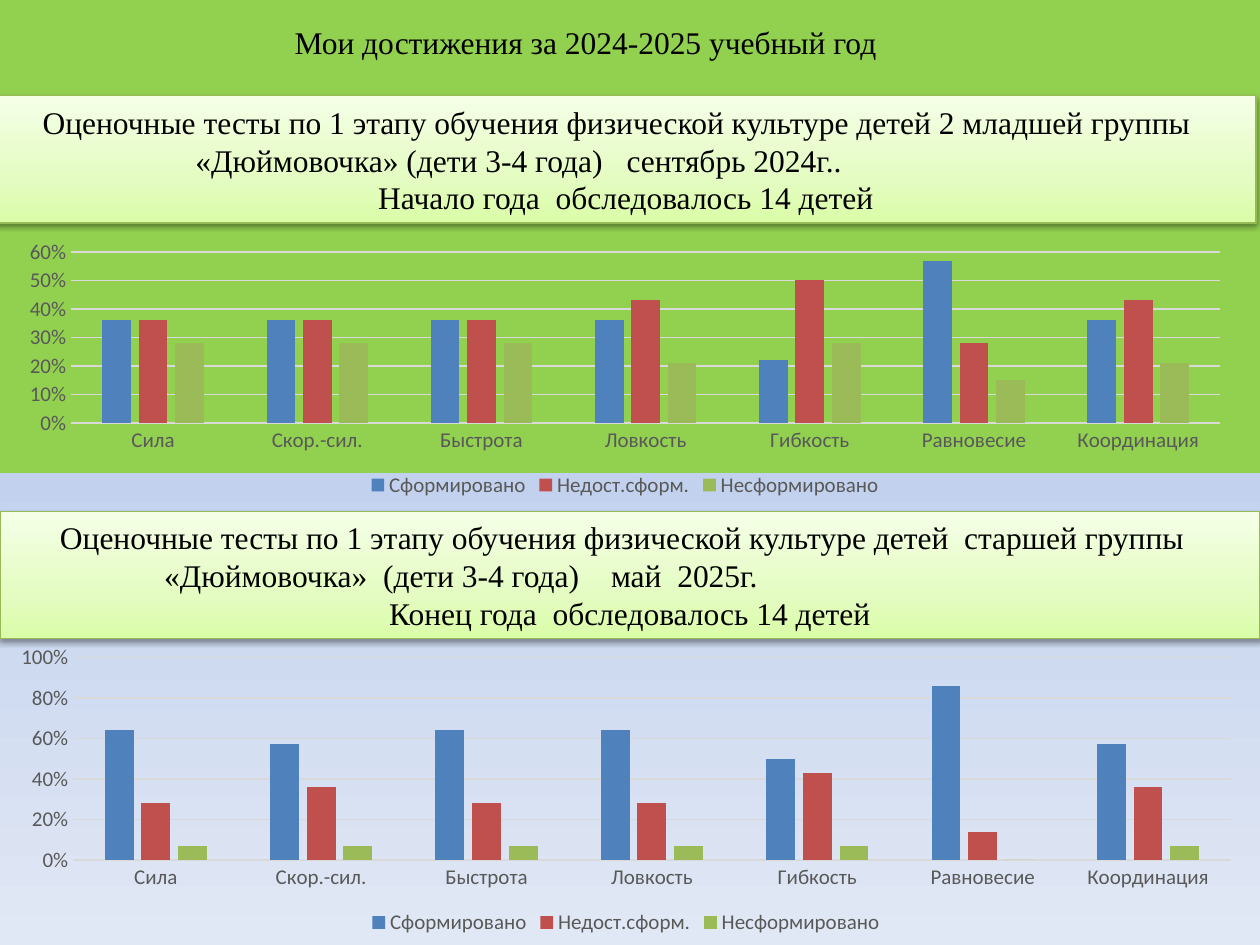
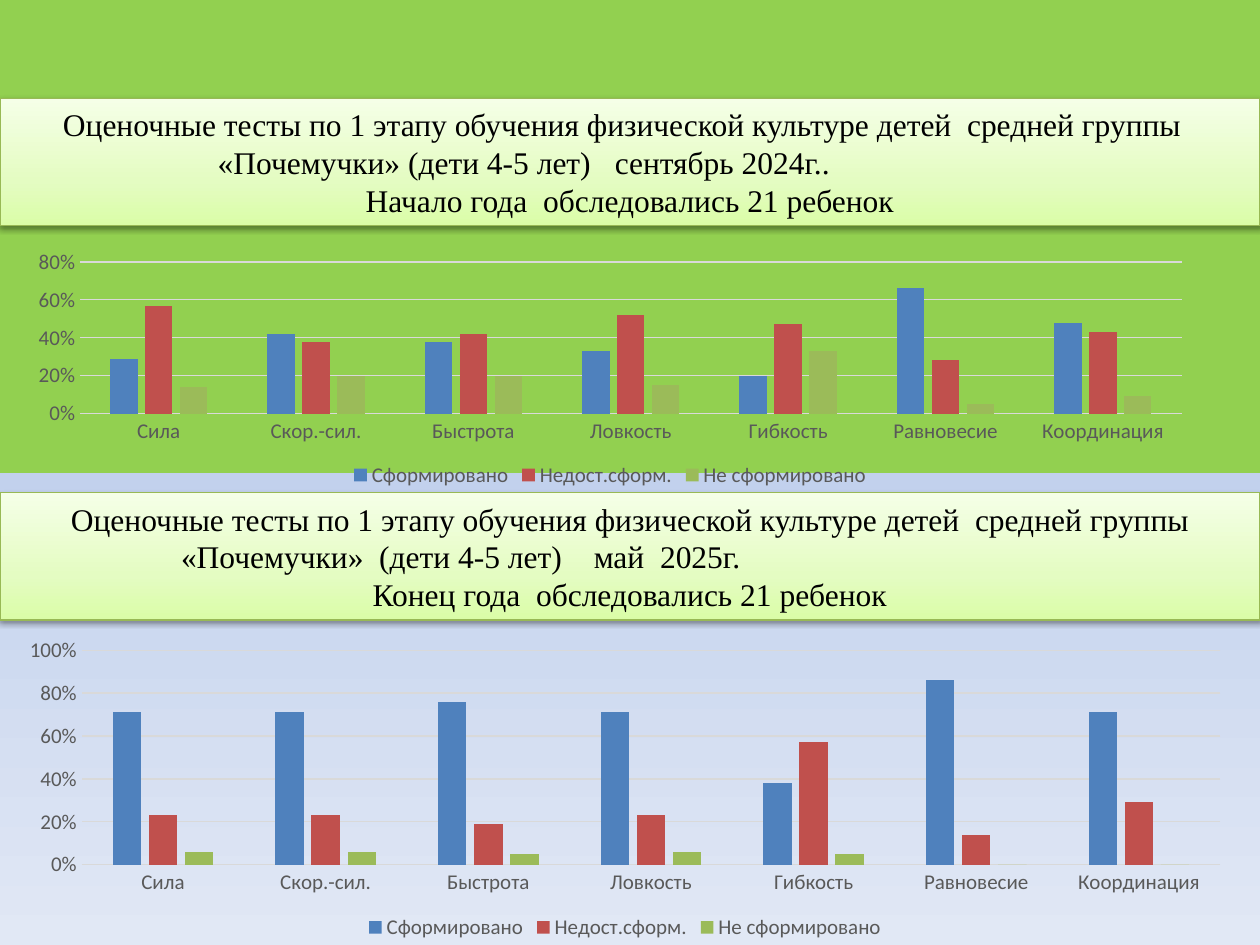
from dataclasses import dataclass
from lxml import etree
from pptx import Presentation
from pptx.chart.data import CategoryChartData as Data
from pptx.dml.color import RGBColor as Rgb
from pptx.enum.chart import XL_CHART_TYPE as Kind, XL_LEGEND_POSITION as Spot, XL_TICK_MARK as Tick
from pptx.enum.shapes import MSO_SHAPE as Form
from pptx.enum.text import PP_ALIGN as Align
from pptx.oxml.ns import qn
from pptx.util import Cm, Pt


@dataclass(frozen=True)
class Theme:
    serif: str = "Times New Roman"
    sans: str = "Calibri"
    head: int = 18
    label: int = 12
    ink: str = "000000"
    grey: str = "595959"
    grid: str = "D9D9D9"
    edge: str = "98B955"
    bars: tuple = ("4F81BD", "C0504D", "9BBB59")
    back: tuple = ((50, "92D050"), (50, "C2D1ED"), (100, "E1E8F5"))
    band: tuple = ((0, "DAFDA7"), (35, "E4FCC2"), (100, "F5FFE7"))


T = Theme()
SKILLS = ["Сила", "Скор.-сил.", "Быстрота", "Ловкость", "Гибкость", "Равновесие", "Координация"]
TEST = "Оценочные тесты по 1 этапу обучения физической культуре детей "


def rgb(code):
    return Rgb.from_string(code)


def style(font, face, size, color):
    font.name, font.size = face, Pt(size)
    font.color.rgb = rgb(color)


def sub(node, tag, **attrs):
    return etree.SubElement(node, qn(tag), {k: str(v) for k, v in attrs.items()})


def blend(fill, root, stops, angle):
    """Gradient fill with any number of stops."""
    fill.gradient()
    fill.gradient_angle = angle
    items = next(root.iter(qn("a:gsLst")))
    for item in list(items):
        items.remove(item)
    for place, color in stops:
        sub(sub(items, "a:gs", pos=place * 1000), "a:srgbClr", val=color)


def cast(shape):
    """Soft shadow straight below."""
    shape.shadow.inherit = False
    glow = sub(shape.element.spPr.find(qn("a:effectLst")), "a:outerShdw",
               blurRad=Pt(3.1), dist=Pt(1.6), dir=5400000, rotWithShape=0)
    sub(sub(glow, "a:srgbClr", val=T.ink), "a:alpha", val=38000)


def title(slide, box, text):
    para = slide.shapes.add_textbox(*map(Cm, box)).text_frame.paragraphs[0]
    para.text = text
    style(para.font, T.serif, T.head, T.ink)


def band(slide, box, lines):
    """Heading band; each line is (text, left indent or None for centred, gap in points)."""
    shape = slide.shapes.add_shape(Form.RECTANGLE, *map(Cm, box))
    blend(shape.fill, shape.element.spPr, T.band, 90)
    shape.line.color.rgb, shape.line.width = rgb(T.edge), Pt(0.75)
    cast(shape)
    frame = shape.text_frame
    frame.word_wrap = True
    for i, (text, left, gap) in enumerate(lines):
        para = frame.add_paragraph() if i else frame.paragraphs[0]
        para.alignment = Align.CENTER if left is None else Align.LEFT
        if left is not None:
            para._p.get_or_add_pPr().set("marL", str(Cm(left)))
        style(para.font, T.serif, T.head, T.ink)
        start, mark, end = text.partition("|")
        para.add_run().text = start
        if mark:
            # One widened space parts the group from the month
            space = para.add_run()
            space.text = " "
            space.font._element.set("spc", str(int(gap * 100)))
            para.add_run().text = end


def graph(slide, box, names, rows, top, step):
    data = Data(number_format="0%")
    data.categories = SKILLS
    for name, row in zip(names, rows):
        data.add_series(name, [n / 100 for n in row])
    chart = slide.shapes.add_chart(Kind.COLUMN_CLUSTERED, *map(Cm, box), data).chart
    style(chart.font, T.sans, 10, T.ink)
    chart.has_title = False
    # Bars
    plot = chart.plots[0]
    plot.gap_width, plot.overlap, plot.vary_by_categories = 219, -27, False
    for bar, color in zip(plot.series, T.bars):
        bar.format.fill.solid()
        bar.format.fill.fore_color.rgb = rgb(color)
        bar.invert_if_negative = False
    # Axes
    cats, vals = chart.category_axis, chart.value_axis
    for axis in (cats, vals):
        axis.major_tick_mark = axis.minor_tick_mark = Tick.NONE
        style(axis.tick_labels.font, T.sans, T.label, T.grey)
    vals.minimum_scale, vals.maximum_scale, vals.major_unit = 0, top, step
    vals.tick_labels.number_format = "0%"
    vals.tick_labels.number_format_is_linked = False
    vals.has_major_gridlines = True
    vals.format.line.fill.background()
    for line in (cats.format.line, vals.major_gridlines.format.line):
        line.color.rgb, line.width = rgb(T.grid), Pt(0.75)
    # Legend
    chart.has_legend = True
    chart.legend.position = Spot.BOTTOM
    chart.legend.include_in_layout = False
    style(chart.legend.font, T.sans, T.label, T.grey)


def page(deck, last, terms):
    """Slide with one band and one chart for each term."""
    slide = deck.slides.add_slide(deck.slide_layouts[6])
    blend(slide.background.fill, slide.element, T.back, 270)
    names = ["Сформировано", "Недост.сформ.", last]
    for spot, lines, box, rows, top, step in terms:
        band(slide, (*spot, 25.4, 2.57), lines)
        graph(slide, box, names, rows, top, step)
    return slide


def main():
    deck = Presentation()
    deck.slide_width, deck.slide_height = Cm(25.4), Cm(19.05)

    # Younger group
    slide = page(deck, "Несформировано", [
        ((-0.08, 1.93),
         [(TEST + "2 младшей группы", 0.69, 0),
          ("«Дюймовочка» (дети 3-4 года)|сентябрь 2024г..", 3.77, 9),
          ("Начало года  обследовалось 14 детей", None, 0)],
         (0.1, 4.72, 25, 5.41),
         [[36, 36, 36, 36, 22, 57, 36], [36, 36, 36, 43, 50, 28, 43],
          [28, 28, 28, 21, 28, 15, 21]], 0.6, 0.1),
        ((0, 10.31),
         [(TEST + " старшей группы", 0.96, 0),
          ("«Дюймовочка»  (дети 3-4 года)|май  2025г.", 3.06, 13.5),
          ("Конец года  обследовалось 14 детей", None, 0)],
         (-0.08, 12.88, 25.4, 6.07),
         [[64, 57, 64, 64, 50, 86, 57], [28, 36, 28, 28, 43, 14, 36],
          [7, 7, 7, 7, 7, 0, 7]], 1, 0.2),
    ])
    title(slide, (5.69, 0.33, 12.37, 1.02), "Мои достижения за 2024-2025 учебный год")

    # Middle group
    page(deck, "Не сформировано", [
        ((0, 1.98),
         [(TEST + " средней группы", 1.02, 0),
          ("«Почемучки» (дети 4-5 лет)|сентябрь 2024г..", 4.14, 9),
          ("Начало года  обследовались 21 ребенок", None, 0)],
         (0.3, 4.93, 24, 5),
         [[29, 42, 38, 33, 20, 66, 48], [57, 38, 42, 52, 47, 28, 43],
          [14, 20, 20, 15, 33, 5, 9]], 0.8, 0.2),
        ((0, 9.93),
         [(TEST + " средней группы", 1.18, 0),
          ("«Почемучки»  (дети 4-5 лет)|май  2025г.", 3.4, 13.5),
          ("Конец года  обследовались 21 ребенок", None, 0)],
         (0.1, 12.73, 25, 6.32),
         [[71, 71, 76, 71, 38, 86, 71], [23, 23, 19, 23, 57, 14, 29],
          [6, 6, 5, 6, 5, 0, 0]], 1, 0.2),
    ])
    deck.save("out.pptx")


if __name__ == "__main__":
    main()
